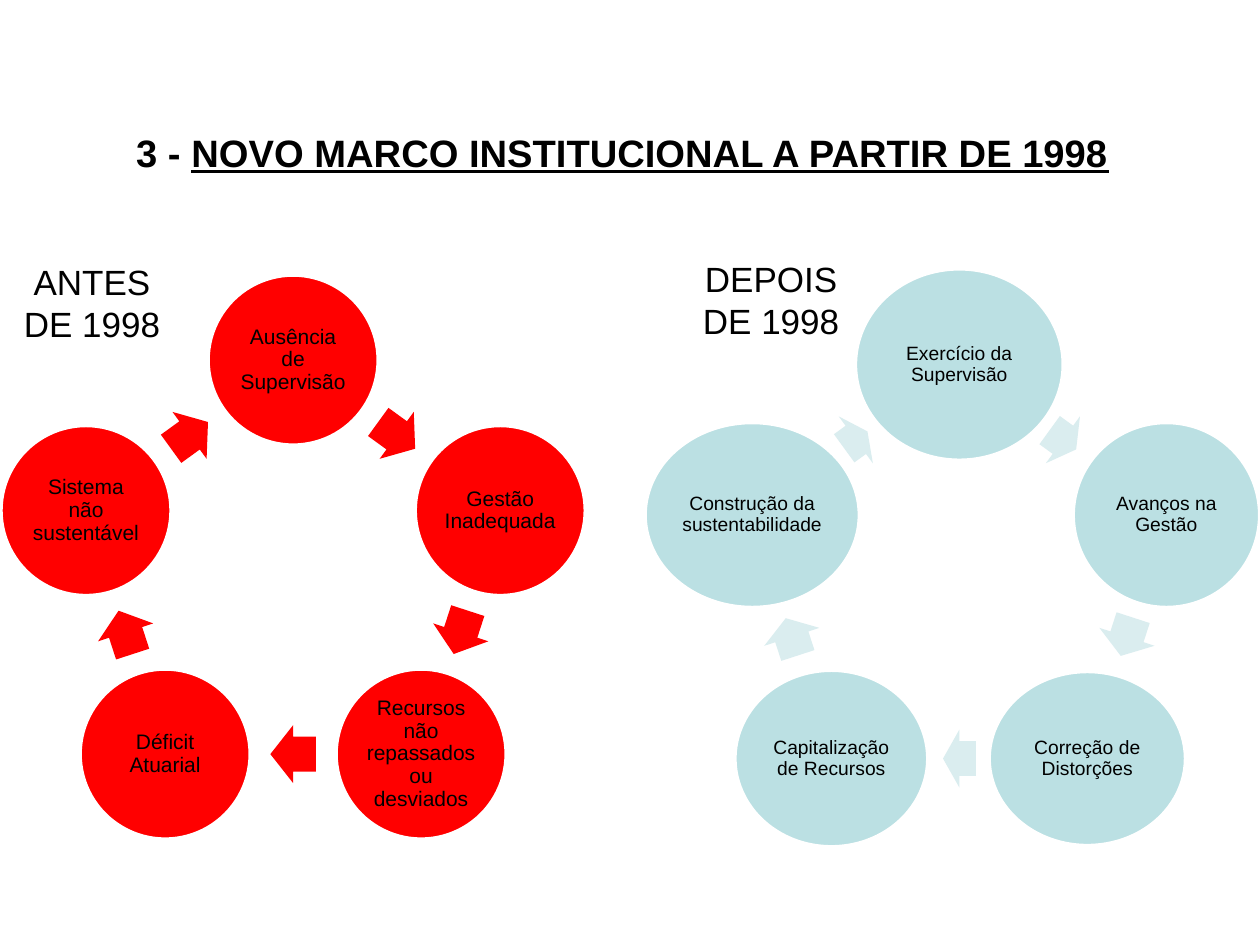
import math
from pptx import Presentation, util as u
from pptx.dml.color import RGBColor
from pptx.enum import shapes, text

THEME = {
    "font": "Arial", "ink": "000000", "edge": "FFFFFF",
    "title": 21.8, "heading": 20,
}

# Content (lengths in cm); each step: label, circle size, width of the arrow after it
TITLE = [("3 - ", False), ("NOVO MARCO INSTITUCIONAL A PARTIR DE 1998", True)]
CYCLES = [
    {
        "heading": "ANTES DE 1998", "heading_at": (0, 5.13),
        "center": (5.91, 11.65), "size": 12,
        "circle": "FF0000", "arrow": "FF0000",
        "steps": [(label, (3.43, 3.43), 0.92) for label in (
            "Ausência de Supervisão",
            "Gestão Inadequada",
            "Recursos não repassados ou desviados",
            "Déficit Atuarial",
            "Sistema não sustentável",
        )],
    },
    {
        "heading": "DEPOIS DE 1998", "heading_at": (13.69, 5.07),
        "center": (19.34, 11.74), "size": 11,
        "circle": "BBE0E3", "arrow": "DAEDEF",
        "steps": [
            ("Exercício da Supervisão", (4.19, 3.86), 0.66),
            ("Avanços na Gestão", (3.76, 3.73), 0.81),
            ("Correção de Distorções", (3.96, 3.51), 0.66),
            ("Capitalização de Recursos", (3.89, 3.56), 0.79),
            ("Construção da sustentabilidade", (4.32, 3.73), 0.58),
        ],
    },
]
RADIUS = 4.39
ARROW_HEIGHT = 1.17
HEADING_SIZE = (3.71, 1.96)

prs = Presentation()
prs.slide_width, prs.slide_height = u.Cm(25.4), u.Cm(19.05)
slide = prs.slides.add_slide(prs.slide_layouts[6])


def write(holder, runs, *, size, bold=False, spacing=None, inset=None, middle=True):
    """Put centred text, given as (words, underlined) pairs, into a shape."""
    frame = holder.text_frame
    frame.word_wrap = True
    frame.vertical_anchor = text.MSO_ANCHOR.MIDDLE if middle else text.MSO_ANCHOR.TOP
    if inset is not None:
        frame.margin_left = frame.margin_right = u.Cm(inset)
        frame.margin_top = frame.margin_bottom = u.Cm(inset)
    paragraph = frame.paragraphs[0]
    paragraph.alignment = text.PP_ALIGN.CENTER
    paragraph.line_spacing = spacing
    for words, underlined in runs:
        run = paragraph.add_run()
        run.text = words
        run.font.name = THEME["font"]
        run.font.size = u.Pt(size)
        run.font.bold = bold
        run.font.underline = underlined
        run.font.color.rgb = RGBColor.from_string(THEME["ink"])


def text_box(left, top, width, height):
    return slide.shapes.add_textbox(u.Cm(left), u.Cm(top), u.Cm(width), u.Cm(height))


def centered_shape(kind, center, size, fill):
    (x, y), (width, height) = center, size
    shape = slide.shapes.add_shape(kind, u.Cm(x - width / 2), u.Cm(y - height / 2),
                                   u.Cm(width), u.Cm(height))
    shape.shadow.inherit = False
    shape.fill.solid()
    shape.fill.fore_color.rgb = RGBColor.from_string(fill)
    shape.line.fill.background()
    return shape


def draw_cycle(cycle):
    steps = cycle["steps"]
    turn = 360 / len(steps)
    cx, cy = cycle["center"]
    # Circles sit on a regular polygon, clockwise from the top
    spots = [(cx + RADIUS * math.sin(math.radians(i * turn)),
              cy - RADIUS * math.cos(math.radians(i * turn)))
             for i in range(len(steps))]

    for i, (label, size, arrow_width) in enumerate(steps):
        circle = centered_shape(shapes.MSO_SHAPE.OVAL, spots[i], size, cycle["circle"])
        circle.line.color.rgb = RGBColor.from_string(THEME["edge"])
        circle.line.width = u.Pt(2)
        write(circle, [(label, False)], size=cycle["size"], spacing=0.9, inset=0.05)

        # Arrow halfway to the next circle
        (x1, y1), (x2, y2) = spots[i], spots[(i + 1) % len(spots)]
        arrow = centered_shape(shapes.MSO_SHAPE.RIGHT_ARROW, ((x1 + x2) / 2, (y1 + y2) / 2),
                               (arrow_width, ARROW_HEIGHT), cycle["arrow"])
        arrow.adjustments[0], arrow.adjustments[1] = 0.6, 0.5
        arrow.rotation = turn * (i + 0.5)


# Title
write(text_box(0, 2.34, 25.1, 1.45), TITLE, size=THEME["title"], bold=True)

# Cycles and their headings
for cycle in CYCLES:
    draw_cycle(cycle)
    write(text_box(*cycle["heading_at"], *HEADING_SIZE), [(cycle["heading"], False)],
          size=THEME["heading"], middle=False)

prs.save("out.pptx")
